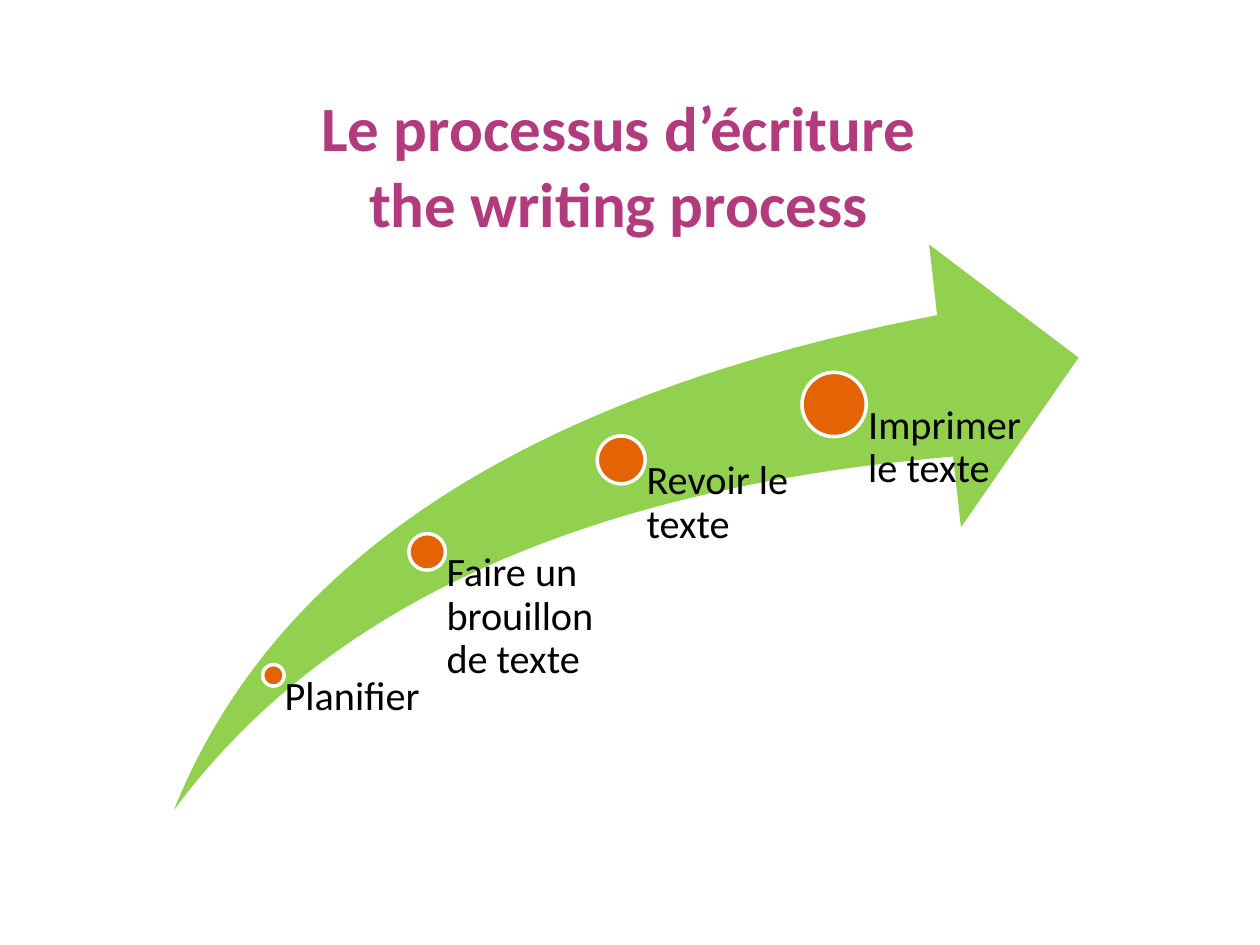
from pptx import Presentation
from pptx.dml.color import RGBColor
from pptx.enum.shapes import MSO_SHAPE
from pptx.enum.text import MSO_ANCHOR, PP_ALIGN
from pptx.util import Inches, Pt

COLORS = {"title": "B23B7E", "arrow": "92D050", "dot": "E36305",
          "edge": "FFFFFF", "text": "000000"}
BASE = 6.43  # bottom shared by the arrow and all labels

# label, dot centre x, dot centre y, dot size, label width
STEPS = [
    ("Planifier", 2.17, 5.36, 0.17, 1.23),
    ("Faire un brouillon de texte", 3.39, 4.38, 0.29, 1.51),
    ("Revoir le texte", 4.93, 3.65, 0.38, 1.51),
    ("Imprimer le texte", 6.62, 3.21, 0.51, 1.51),
]


def color(name):
    return RGBColor.from_string(COLORS[name])


class Page:
    """Holds the text style and the current slide."""

    font = "Calibri"

    def __init__(self, deck):
        self.slide = deck.slides.add_slide(deck.slide_layouts[5])

    def style(self, para, size, name, bold=False):
        for run in para.runs:
            run.font.name = self.font
            run.font.size = Pt(size)
            run.font.bold = bold
            run.font.color.rgb = color(name)

    def title(self, text, x, y, w, h):
        box = self.slide.shapes.title
        box.left, box.top, box.width, box.height = map(Inches, (x, y, w, h))
        frame = box.text_frame
        frame.word_wrap = True
        frame.vertical_anchor = MSO_ANCHOR.MIDDLE
        para = frame.paragraphs[0]
        para.text = text
        para.alignment = PP_ALIGN.CENTER
        self.style(para, 36, "title", True)

    def shape(self, kind, x, y, w, h, fill):
        item = self.slide.shapes.add_shape(kind, *map(Inches, (x, y, w, h)))
        item.shadow.inherit = False
        item.fill.solid()
        item.fill.fore_color.rgb = color(fill)
        item.line.fill.background()
        return item

    def arrow(self, x, y, w, h):
        item = self.shape(MSO_SHAPE.SWOOSH_ARROW, x, y, w, h, "arrow")
        item.adjustments[0] = item.adjustments[1] = 0.25

    def dot(self, x, y, size):
        """Draw a dot centred on x, y."""
        item = self.shape(MSO_SHAPE.OVAL, x - size / 2, y - size / 2,
                          size, size, "dot")
        item.line.color.rgb = color("edge")
        item.line.width = Pt(2)

    def label(self, text, x, y, w, inset):
        box = self.slide.shapes.add_textbox(
            *map(Inches, (x, y, w, BASE - y)))
        frame = box.text_frame
        frame.word_wrap = True
        frame.margin_left = Inches(inset)
        frame.margin_top = frame.margin_right = frame.margin_bottom = 0
        para = frame.paragraphs[0]
        para.text = text
        para.line_spacing = 0.9
        para.space_after = Pt(8)
        self.style(para, 23, "text")


def main():
    deck = Presentation()
    deck.slide_width, deck.slide_height = Inches(10), Inches(7.5)
    page = Page(deck)
    page.title("Le processus d’écriture \vthe writing process ",
               0.43, 0.75, 9.07, 1.11)
    page.arrow(1.38, 1.94, 7.18, BASE - 1.94)
    for text, x, y, size, width in STEPS:
        page.dot(x, y, size)
        page.label(text, x, y, width, 0.53 * size)
    deck.save("out.pptx")


if __name__ == "__main__":
    main()
